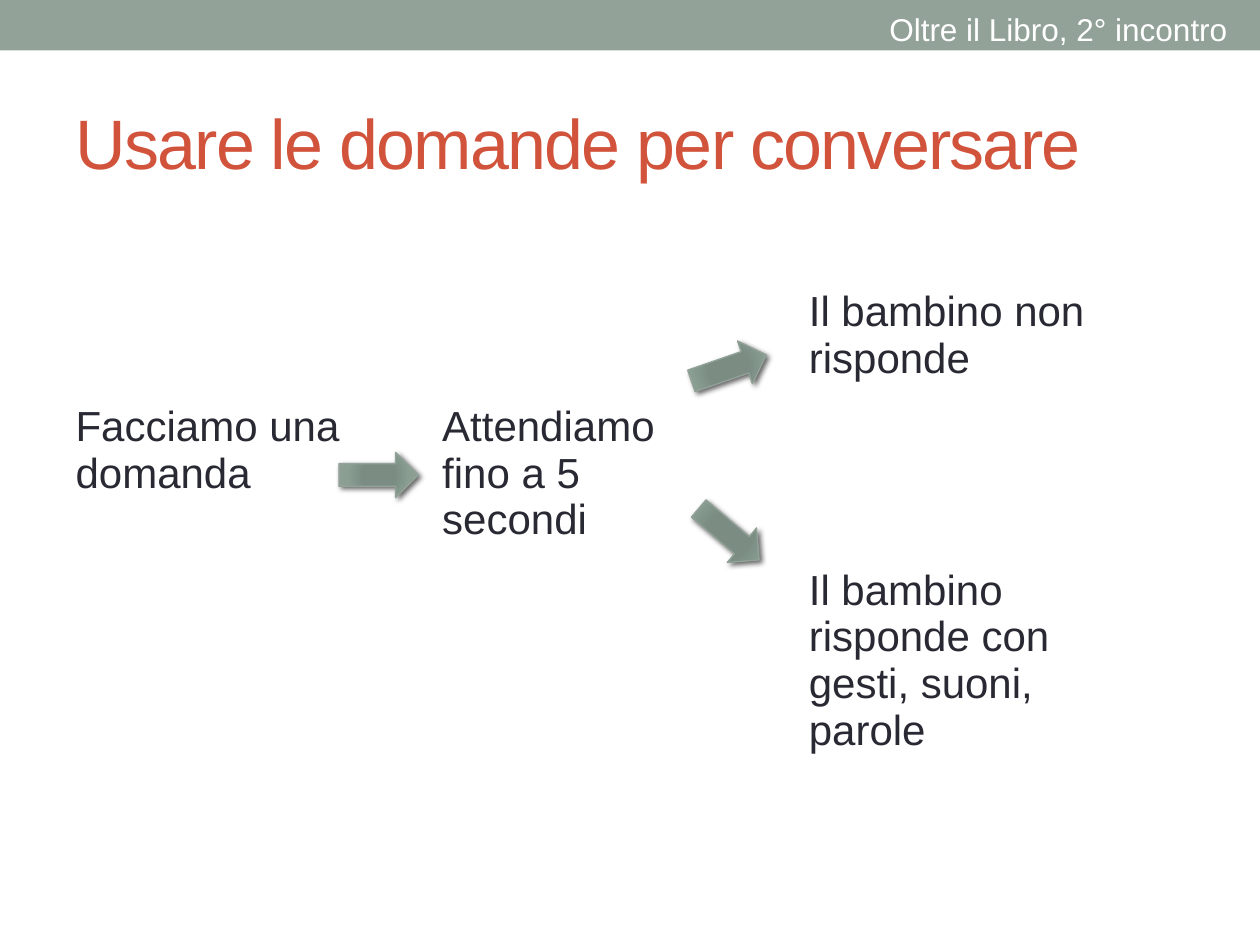
from dataclasses import dataclass

import lxml.etree
import pptx
import pptx.dml.color
import pptx.enum.shapes
import pptx.enum.text
import pptx.oxml
import pptx.oxml.ns
import pptx.util

Inches = pptx.util.Inches
Pt = pptx.util.Pt
qn = pptx.oxml.ns.qn
NS = 'xmlns:a="http://schemas.openxmlformats.org/drawingml/2006/main"'


@dataclass(frozen=True)
class Theme:
    font: str = "Arial"
    band: str = "93A299"
    title: str = "D2533C"
    body: str = "292934"
    white: str = "FFFFFF"
    shadow: str = "000000"
    gradient: tuple = ((0, "7B8E82"), (34, "7B8D83"), (70, "8A9E92"), (100, "93A299"))
    title_size: int = 40
    body_size: int = 24
    header_size: int = 18


@dataclass(frozen=True)
class Arrow:
    left: float
    top: float
    rotation: float = 0


THEME = Theme()
ARROW_SIZE = (0.63, 0.36)
ARROWS = [Arrow(5.47, 2.74, 340.9), Arrow(5.47, 4.06, 40.4), Arrow(2.69, 3.59)]
COL_WIDTH = 2.91
ROW_HEIGHTS = (0.91, 1.02, 1.3)
STEPS = (
    ("", "", "Il bambino non risponde"),
    ("Facciamo una domanda", "Attendiamo\nfino a 5\nsecondi", ""),
    ("", "", "Il bambino risponde con gesti, suoni, parole"),
)


def rgb(color: str) -> pptx.dml.color.RGBColor:
    return pptx.dml.color.RGBColor.from_string(color)


def write(tf, text: str, *, size: int, color: str, spacing: int = 0) -> None:
    """Write one paragraph per line of text; spacing is in points."""
    for i, line in enumerate(text.split("\n")):
        p = tf.add_paragraph() if i else tf.paragraphs[0]
        r = p.add_run()
        r.text = line
        r.font.name = THEME.font
        r.font.size = Pt(size)
        r.font.color.rgb = rgb(color)
        if spacing:
            r._r.get_or_add_rPr().set("spc", str(spacing * 100))


def add_text(s, box: tuple, text: str, *, wrap: bool = True, middle: bool = False, **fmt) -> None:
    tf = s.shapes.add_textbox(*map(Inches, box)).text_frame
    tf.word_wrap = wrap
    if middle:
        tf.vertical_anchor = pptx.enum.text.MSO_ANCHOR.MIDDLE
    write(tf, text, **fmt)


def add_band(s) -> None:
    sp = s.shapes.add_shape(pptx.enum.shapes.MSO_SHAPE.RECTANGLE, 0, 0, Inches(10), Inches(0.4))
    sp.shadow.inherit = False
    sp.fill.solid()
    sp.fill.fore_color.rgb = rgb(THEME.band)
    sp.line.fill.background()


def add_borders(cell, bottom: int) -> None:
    tc_pr = cell._tc.get_or_add_tcPr()
    for side, width in (("L", 1), ("R", 1), ("T", 1), ("B", bottom)):
        tc_pr.append(pptx.oxml.parse_xml(
            f'<a:ln{side} {NS} w="{Pt(width)}"><a:solidFill>'
            f'<a:srgbClr val="{THEME.white}"/></a:solidFill></a:ln{side}>'))


def add_steps(s) -> None:
    cols = len(STEPS[0])
    table = s.shapes.add_table(
        len(STEPS), cols, Inches(0.5), Inches(2.24),
        Inches(COL_WIDTH * cols), Inches(sum(ROW_HEIGHTS))).table
    for col in table.columns:
        col.width = Inches(COL_WIDTH)
    for i, (height, texts) in enumerate(zip(ROW_HEIGHTS, STEPS)):
        table.rows[i].height = Inches(height)
        for j, text in enumerate(texts):
            cell = table.cell(i, j)
            add_borders(cell, bottom=1 if i else 3)
            cell.fill.background()
            if text:
                write(cell.text_frame, text, size=THEME.body_size, color=THEME.body)


def add_arrow(s, arrow: Arrow) -> None:
    """Draw a right arrow with a radial gradient and a soft shadow."""
    sp = s.shapes.add_shape(
        pptx.enum.shapes.MSO_SHAPE.RIGHT_ARROW,
        *map(Inches, (arrow.left, arrow.top, *ARROW_SIZE)))
    sp.rotation = arrow.rotation
    sp.line.color.rgb = rgb(THEME.band)
    sp.line.width = Pt(0.75)
    sp.fill.solid()
    sp_pr = sp._element.spPr
    stops = "".join(
        f'<a:gs pos="{pos * 1000}"><a:srgbClr val="{color}"/></a:gs>'
        for pos, color in THEME.gradient)
    sp_pr.replace(sp_pr.find(qn("a:solidFill")), pptx.oxml.parse_xml(
        f'<a:gradFill {NS} rotWithShape="1"><a:gsLst>{stops}</a:gsLst><a:path path="circle">'
        '<a:fillToRect l="100000" t="100000" r="100000" b="100000"/></a:path></a:gradFill>'))
    sp.shadow.inherit = False
    shadow = lxml.etree.SubElement(
        sp_pr.find(qn("a:effectLst")), qn("a:outerShdw"),
        blurRad=str(Pt(3)), dist=str(Pt(2)), dir=str(45 * 60000), rotWithShape="0")
    color = lxml.etree.SubElement(shadow, qn("a:srgbClr"), val=THEME.shadow)
    lxml.etree.SubElement(color, qn("a:alpha"), val="60000")


def main() -> None:
    prs = pptx.Presentation()
    prs.slide_width, prs.slide_height = Inches(10), Inches(7.5)
    s = prs.slides.add_slide(prs.slide_layouts[6])
    add_band(s)
    add_text(s, (0.5, 0.58, 9, 1.08), "Usare le domande per conversare",
             middle=True, size=THEME.title_size, color=THEME.title, spacing=-1)
    add_steps(s)
    add_text(s, (6.96, 0.03, 2.91, 0.4), "Oltre il Libro, 2° incontro",
             wrap=False, size=THEME.header_size, color=THEME.white)
    for arrow in ARROWS:
        add_arrow(s, arrow)
    prs.save("out.pptx")


if __name__ == "__main__":
    main()
